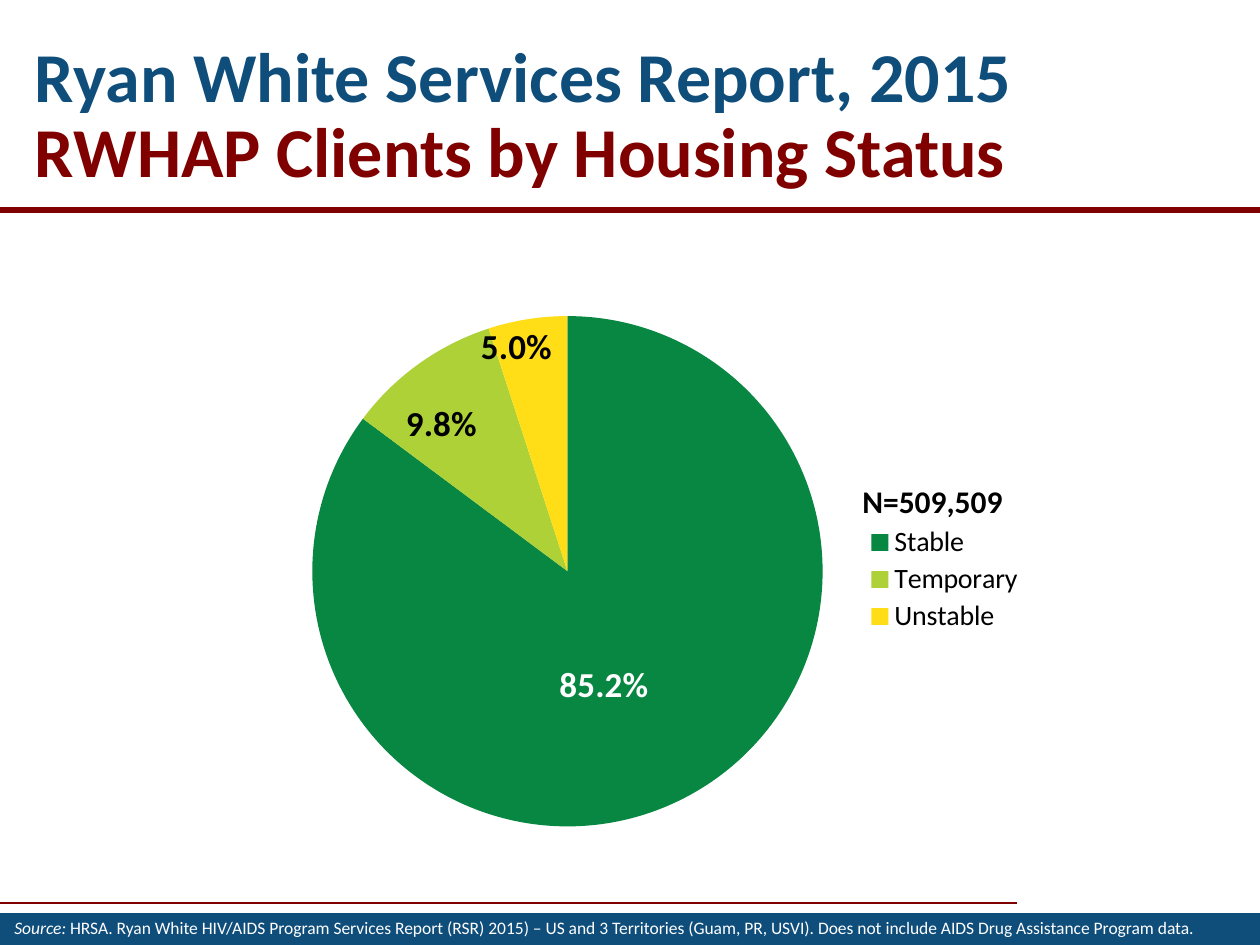
from lxml.etree import SubElement
from pptx import Presentation
from pptx.chart.data import CategoryChartData
from pptx.dml.color import RGBColor
from pptx.enum.chart import XL_CHART_TYPE, XL_LABEL_POSITION, XL_LEGEND_POSITION
from pptx.enum.shapes import MSO_CONNECTOR, MSO_SHAPE
from pptx.enum.text import MSO_ANCHOR
from pptx.oxml.ns import qn
from pptx.util import Pt

NAVY = RGBColor(0x0F, 0x4D, 0x7B)
MAROON = RGBColor(0x80, 0x00, 0x00)
GREEN = RGBColor(0x08, 0x87, 0x43)
LIME = RGBColor(0xAD, 0xD1, 0x36)
YELLOW = RGBColor(0xFF, 0xDE, 0x17)
BLACK = RGBColor(0, 0, 0)
WHITE = RGBColor(0xFF, 0xFF, 0xFF)
FONT = "Calibri"

HEADING = [
    ("Ryan White Services Report, 2015", NAVY),
    ("RWHAP Clients by Housing Status", MAROON),
]
SOURCE = [
    ("Source: ", True),
    ("HRSA. Ryan White HIV/AIDS Program Services Report (RSR) 2015) – US and 3 "
     "Territories (Guam, PR, USVI). Does not include AIDS Drug Assistance "
     "Program data.", False),
]
CHART_TITLE = "N=509,509"
SLICES = [
    ("Stable", 0.852, GREEN, WHITE, (-0.02, 0)),
    ("Temporary", 0.098, LIME, BLACK, (-0.05, -0.08)),
    ("Unstable", 0.05, YELLOW, BLACK, (-0.03, -0.18)),
]
RULES = [(-1, 903, 1017, 1.5), (0, 210, 1260, 3)]


def px(length):
    return round(length * 914400 / 126)


def set_font(font, size, color, bold=False):
    font.name = FONT
    font.size = Pt(size)
    font.bold = bold
    font.color.rgb = color


def add_box(page, left, top, width, height):
    box = page.shapes.add_textbox(px(left), px(top), px(width), px(height))
    box.text_frame.word_wrap = True
    return box.text_frame


def place(element, index, x, y, width=None, height=None, inner=False):
    for old in element.findall(qn("c:layout")):
        element.remove(old)
    layout = SubElement(element, qn("c:layout"))
    element.insert(index, layout)
    manual = SubElement(layout, qn("c:manualLayout"))
    settings = [("x", x), ("y", y)]
    if inner:
        settings.insert(0, ("layoutTarget", "inner"))
    if element.tag != qn("c:dLbl"):
        settings[-2:-2] = [("xMode", "edge"), ("yMode", "edge")]
    if width:
        settings += [("w", width), ("h", height)]
    for name, value in settings:
        SubElement(manual, qn("c:" + name)).set("val", str(value))


def add_pie(page):
    data = CategoryChartData(number_format="0.0%")
    data.categories = [row[0] for row in SLICES]
    data.add_series("Series 1", [row[1] for row in SLICES])
    chart = page.shapes.add_chart(
        XL_CHART_TYPE.PIE, px(113), px(289), px(1033), px(543), data).chart
    set_font(chart.font, 18, BLACK)

    chart.has_title = True
    title = chart.chart_title
    title.include_in_layout = False
    title.text_frame.text = CHART_TITLE
    set_font(title.text_frame.paragraphs[0].font, 18, BLACK, True)
    place(title._element, 1, 0.72, 0.34)

    chart.has_legend = True
    legend = chart.legend
    legend.position = XL_LEGEND_POSITION.RIGHT
    legend.include_in_layout = False
    set_font(legend.font, 16, BLACK)
    place(legend._element, 1, 0.72, 0.43, 0.17, 0.21)

    plot = chart.plots[0]
    plot.vary_by_categories = True
    plot_area = chart._chartSpace.find(".//" + qn("c:plotArea"))
    place(plot_area, 0, 0.19, 0.05, 0.5, 0.94, inner=True)

    series = plot.series[0]
    labels = series.data_labels
    labels.show_value = True
    labels.number_format = "0.0%"
    labels.number_format_is_linked = False
    labels.position = XL_LABEL_POSITION.CENTER
    set_font(labels.font, 20, BLACK, True)
    for number, (_, _, color, label_color, shift) in enumerate(SLICES):
        point = series.points[number]
        point.format.fill.solid()
        point.format.fill.fore_color.rgb = color
        label = point.data_label
        set_font(label.font, 20, label_color, True)
        label.position = XL_LABEL_POSITION.CENTER
        element = labels._element.findall(qn("c:dLbl"))[number]
        place(element, 1, *shift)


def main():
    deck = Presentation()
    deck.slide_width, deck.slide_height = px(1260), px(945)
    page = deck.slides.add_slide(deck.slide_layouts[6])

    for left, top, right, weight in RULES:
        rule = page.shapes.add_connector(
            MSO_CONNECTOR.STRAIGHT, px(left), px(top), px(right), px(top))
        rule.line.color.rgb = MAROON
        rule.line.width = Pt(weight)
        SubElement(rule._element.spPr, qn("a:effectLst"))

    footer = page.shapes.add_shape(
        MSO_SHAPE.RECTANGLE, 0, px(913), px(1260), px(32))
    footer.shadow.inherit = False
    footer.fill.solid()
    footer.fill.fore_color.rgb = NAVY
    footer.line.fill.background()

    heading = add_box(page, 21, 26, 1153, 183)
    heading.vertical_anchor = MSO_ANCHOR.MIDDLE
    heading.margin_left = heading.margin_right = px(14)
    para = heading.paragraphs[0]
    para.line_spacing = 0.9
    for number, (text, color) in enumerate(HEADING):
        if number:
            para.add_line_break()
        span = para.add_run()
        span.text = text
        set_font(span.font, 40, color, True)

    add_pie(page)

    para = add_box(page, 2, 911, 1258, 34).paragraphs[0]
    set_font(para.font, 10, WHITE)
    for text, italic in SOURCE:
        span = para.add_run()
        span.text = text
        span.font.italic = italic

    deck.save("out.pptx")


if __name__ == "__main__":
    main()
